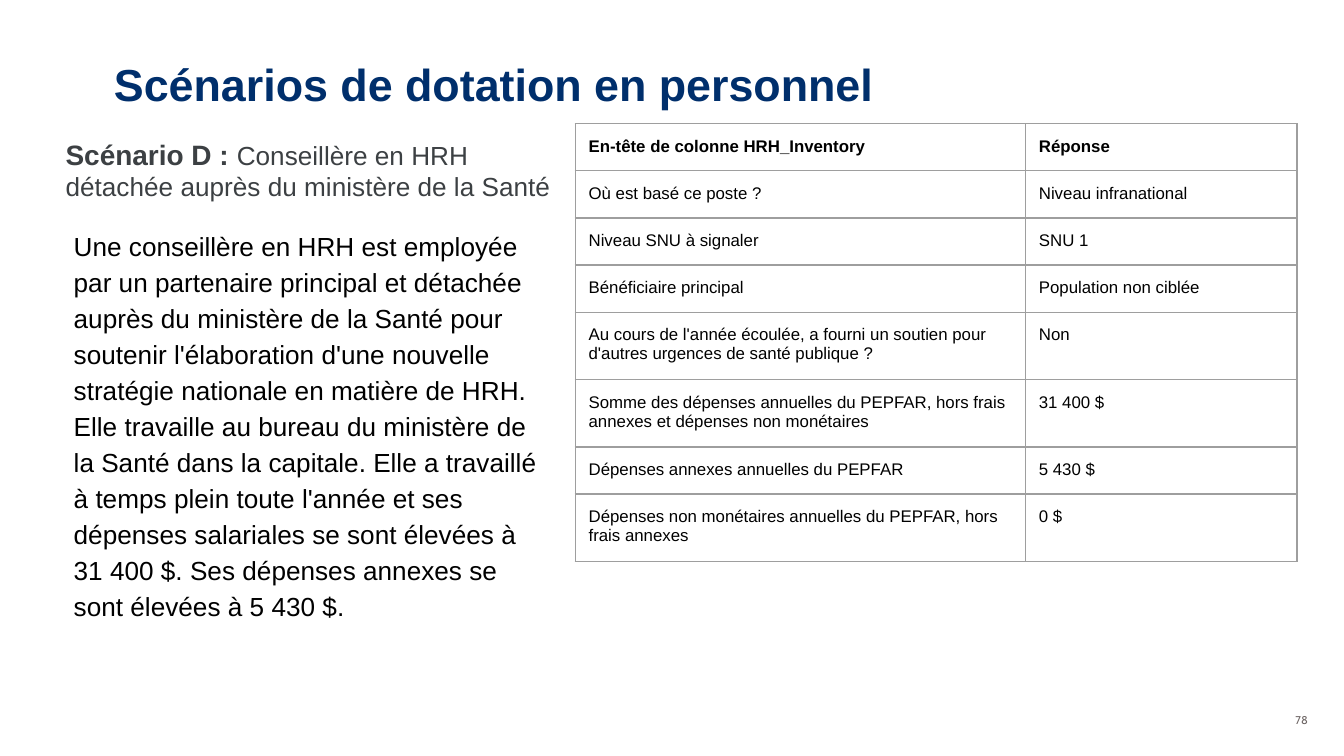
"""Build the staffing scenario slide with its answer table."""
import dataclasses
import typing

import lxml.etree
import pptx
import pptx.dml.color
import pptx.enum.text
import pptx.oxml.ns
import pptx.util

Inches = pptx.util.Inches
Pt = pptx.util.Pt
Align = pptx.enum.text.PP_ALIGN
Anchor = pptx.enum.text.MSO_ANCHOR


@dataclasses.dataclass(frozen=True)
class Theme:
    navy: str = "002F6C"
    slate: str = "3C4043"
    black: str = "000000"
    taupe: str = "6C6463"
    rule: str = "9E9E9E"
    sans: str = "Arial"
    foot: str = "Cabin"
    title: int = 24
    lead: int = 15
    body: int = 14
    cell: int = 9
    page: int = 6
    pad: float = 0.1
    line: float = 0.75


THEME = Theme()


class Run(typing.NamedTuple):
    text: str
    size: int
    color: str
    bold: bool = False
    font: str = THEME.sans


class Box(typing.NamedTuple):
    left: float
    top: float
    width: float
    height: float
    runs: list[Run]
    anchor: Anchor = Anchor.TOP
    align: Align = Align.LEFT
    inset: float = THEME.pad
    pitch: float = 1.0
    space: int = 0


class Row(typing.NamedTuple):
    label: str
    reply: str
    height: float = 0.35
    bold: bool = False


WIDE = 10
TALL = 0.5
COLS = (3.35, 2.02)

STORY = (
    "Une conseillère en HRH est employée par un partenaire principal et détachée "
    "auprès du ministère de la Santé pour soutenir l'élaboration d'une nouvelle "
    "stratégie nationale en matière de HRH. Elle travaille au bureau du ministère "
    "de la Santé dans la capitale. Elle a travaillé à temps plein toute l'année et "
    "ses dépenses salariales se sont élevées à 31 400 $. Ses dépenses annexes se "
    "sont élevées à 5 430 $."
)

BOXES = [
    Box(0.75, 0.42, 8.5, 0.5,
        [Run("Scénarios de dotation en personnel", THEME.title, THEME.navy, True)],
        anchor=Anchor.BOTTOM),
    Box(0.39, 0.92, 3.96, 0.45,
        [Run("Scénario D : ", THEME.lead, THEME.slate, True),
         Run("Conseillère en HRH détachée auprès du ministère de la Santé",
             THEME.body, THEME.slate)]),
    Box(0.45, 1.58, 3.71, 2.61, [Run(STORY, THEME.body, THEME.black)],
        pitch=1.15, space=12),
    Box(7.5, 5.26, 2.33, 0.2, [Run("78", THEME.page, THEME.taupe, font=THEME.foot)],
        anchor=Anchor.MIDDLE, align=Align.RIGHT, inset=0.05),
]

ROWS = [
    Row("En-tête de colonne HRH_Inventory", "Réponse", bold=True),
    Row("Où est basé ce poste ?", "Niveau infranational"),
    Row("Niveau SNU à signaler", "SNU 1"),
    Row("Bénéficiaire principal", "Population non ciblée"),
    Row("Au cours de l'année écoulée, a fourni un soutien pour d'autres urgences "
        "de santé publique ?", "Non", TALL),
    Row("Somme des dépenses annuelles du PEPFAR, hors frais annexes et dépenses "
        "non monétaires", "31 400 $", TALL),
    Row("Dépenses annexes annuelles du PEPFAR", "5 430 $"),
    Row("Dépenses non monétaires annuelles du PEPFAR, hors frais annexes", "0 $", TALL),
]


def add_run(para: typing.Any, item: Run) -> None:
    """Append one styled run to a paragraph."""
    run = para.add_run()
    run.text = item.text
    run.font.name = item.font
    run.font.size = Pt(item.size)
    run.font.bold = item.bold
    run.font.color.rgb = pptx.dml.color.RGBColor.from_string(item.color)


def add_box(slide: typing.Any, box: Box) -> None:
    """Draw one text box."""
    shape = slide.shapes.add_textbox(
        Inches(box.left), Inches(box.top), Inches(box.width), Inches(box.height))
    frame = shape.text_frame
    frame.word_wrap = True
    frame.vertical_anchor = box.anchor
    frame.margin_left = frame.margin_right = Inches(THEME.pad)
    frame.margin_top = frame.margin_bottom = Inches(box.inset)
    para = frame.paragraphs[0]
    para.alignment = box.align
    para.line_spacing = box.pitch
    para.space_before = para.space_after = Pt(box.space)
    for item in box.runs:
        add_run(para, item)


def add_rules(cell: typing.Any) -> None:
    """Rule all four sides of a cell."""
    props = cell._tc.get_or_add_tcPr()
    name = pptx.oxml.ns.qn
    for spot, side in enumerate(("a:lnL", "a:lnR", "a:lnT", "a:lnB")):
        line = lxml.etree.Element(name(side), w=str(Pt(THEME.line)))
        fill = lxml.etree.SubElement(line, name("a:solidFill"))
        lxml.etree.SubElement(fill, name("a:srgbClr"), val=THEME.rule)
        props.insert(spot, line)


def add_cell(cell: typing.Any, text: str, bold: bool) -> None:
    """Fill and style one table cell."""
    cell.fill.background()
    cell.margin_left = cell.margin_right = Inches(THEME.pad)
    cell.margin_top = cell.margin_bottom = Inches(THEME.pad)
    add_run(cell.text_frame.paragraphs[0], Run(text, THEME.cell, THEME.black, bold))
    add_rules(cell)


def add_grid(slide: typing.Any, rows: list[Row]) -> None:
    """Draw the answer table."""
    high = sum(row.height for row in rows)
    table = slide.shapes.add_table(
        len(rows), len(COLS), Inches(4.28), Inches(0.92),
        Inches(sum(COLS)), Inches(high)).table
    table.first_row = table.horz_banding = False
    for col, width in zip(table.columns, COLS):
        col.width = Inches(width)
    for line, row in zip(table.rows, rows):
        line.height = Inches(row.height)
        for cell, text in zip(line.cells, (row.label, row.reply)):
            add_cell(cell, text, row.bold)


def main() -> None:
    """Build and save the deck."""
    deck = pptx.Presentation()
    deck.slide_width = Inches(WIDE)
    deck.slide_height = Inches(WIDE * 9 / 16)
    slide = deck.slides.add_slide(deck.slide_layouts[6])
    for box in BOXES:
        add_box(slide, box)
    add_grid(slide, ROWS)
    deck.save("out.pptx")


if __name__ == "__main__":
    main()
